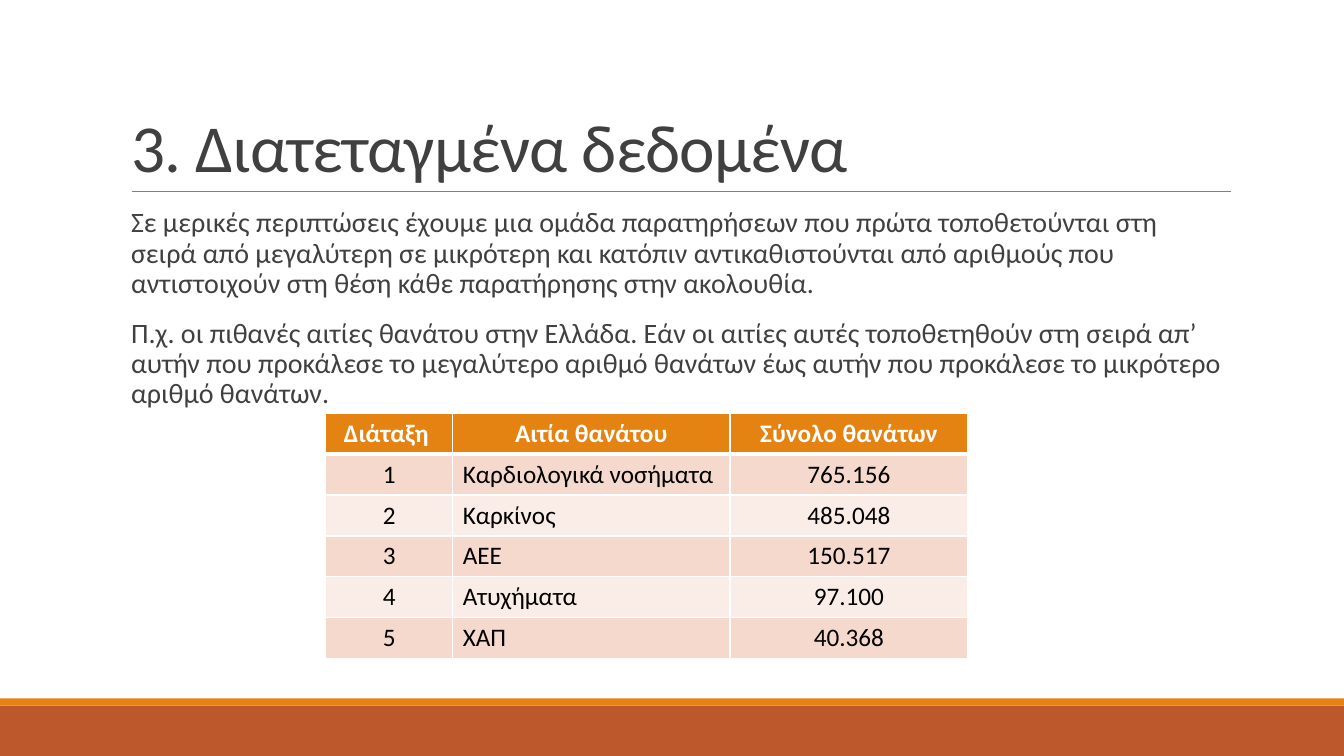
from lxml.etree import SubElement
from pptx import Presentation
from pptx.dml.color import RGBColor
from pptx.enum.shapes import MSO_CONNECTOR, MSO_SHAPE
from pptx.enum.text import MSO_ANCHOR, MSO_AUTO_SIZE, PP_ALIGN
from pptx.oxml.ns import qn
from pptx.util import Inches, Pt

FONT = "Calibri"
ORANGE = "E48312"
RUST = "BD582C"
DARK_GRAY = "404040"
WHITE = "FFFFFF"
BAND_FILLS = ("FAEDE7", "F5D9CC")

TITLE = "3. Διατεταγμένα δεδομένα"
PARAGRAPHS = (
    "Σε μερικές περιπτώσεις έχουμε μια ομάδα παρατηρήσεων που πρώτα τοποθετούνται στη "
    "σειρά από μεγαλύτερη σε μικρότερη και κατόπιν αντικαθιστούνται από αριθμούς που "
    "αντιστοιχούν στη θέση κάθε παρατήρησης στην ακολουθία.",
    "Π.χ. οι πιθανές αιτίες θανάτου στην Ελλάδα. Εάν οι αιτίες αυτές τοποθετηθούν στη "
    "σειρά απ’ αυτήν που προκάλεσε το μεγαλύτερο αριθμό θανάτων έως αυτήν που προκάλεσε "
    "το μικρότερο αριθμό θανάτων.",
)
CAUSES_OF_DEATH = (
    ("Διάταξη ", "Αιτία θανάτου", "Σύνολο θανάτων"),
    ("1", "Καρδιολογικά νοσήματα", "765.156"),
    ("2", "Καρκίνος", "485.048"),
    ("3", "ΑΕΕ", "150.517"),
    ("4", "Ατυχήματα", "97.100"),
    ("5", "ΧΑΠ", "40.368"),
)
COLUMN_WIDTHS = (1.26, 2.75, 2.36)
ROW_HEIGHT = 0.405


def rgb(color):
    return RGBColor.from_string(color)


def place(shape, left, top, width, height):
    shape.left, shape.top = Inches(left), Inches(top)
    shape.width, shape.height = Inches(width), Inches(height)


def add_text(paragraph, text, size, color, bold=False):
    run = paragraph.add_run()
    run.text = text
    run.font.name = FONT
    run.font.size = Pt(size)
    run.font.bold = bold
    run.font.color.rgb = rgb(color)
    return run


def add_band(slide, top, height, color):
    band = slide.shapes.add_shape(
        MSO_SHAPE.RECTANGLE, 0, Inches(top), Inches(13.33), Inches(height)
    )
    band.shadow.inherit = False
    band.fill.solid()
    band.fill.fore_color.rgb = rgb(color)
    band.line.fill.background()


def add_title_rule(slide):
    rule = slide.shapes.add_connector(
        MSO_CONNECTOR.STRAIGHT, Inches(1.31), Inches(1.9), Inches(12.21), Inches(1.9)
    )
    rule.line.color.rgb = rgb("808080")
    rule.line.width = Pt(0.5)
    SubElement(rule._element.spPr, qn("a:effectLst"))


def fill_title(title):
    place(title, 1.2, 0.31, 11, 1.59)
    frame = title.text_frame
    frame.auto_size = MSO_AUTO_SIZE.NONE
    frame.vertical_anchor = MSO_ANCHOR.BOTTOM
    paragraph = frame.paragraphs[0]
    paragraph.alignment = PP_ALIGN.LEFT
    paragraph.line_spacing = 0.85
    run = add_text(paragraph, TITLE, 48, DARK_GRAY)
    run.font._element.set("spc", "-50")


def set_blank_bullet(paragraph):
    properties = paragraph._p.get_or_add_pPr()
    properties.set("marL", str(Inches(0.1)))
    properties.set("indent", str(Inches(-0.1)))
    bullet_color = SubElement(properties, qn("a:buClr"))
    SubElement(bullet_color, qn("a:srgbClr"), val=ORANGE)
    SubElement(properties, qn("a:buChar"), char=" ")


def fill_body(body):
    place(body, 1.2, 2.02, 11, 4.4)
    frame = body.text_frame
    frame.auto_size = MSO_AUTO_SIZE.NONE
    frame.vertical_anchor = MSO_ANCHOR.TOP
    frame.margin_left = frame.margin_right = 0
    for index, text in enumerate(PARAGRAPHS):
        paragraph = frame.add_paragraph() if index else frame.paragraphs[0]
        paragraph.line_spacing = 0.9
        paragraph.space_before = Pt(12)
        paragraph.space_after = Pt(2)
        set_blank_bullet(paragraph)
        add_text(paragraph, text, 20, DARK_GRAY)


def set_borders(cell, top_width, bottom_width):
    properties = cell._tc.get_or_add_tcPr()
    widths = {"lnL": 1, "lnR": 1, "lnT": top_width, "lnB": bottom_width}
    for side, width in widths.items():
        border = SubElement(properties, qn(f"a:{side}"), w=str(Pt(width)))
        SubElement(SubElement(border, qn("a:solidFill")), qn("a:srgbClr"), val=WHITE)


def fill_cell(cell, text, row, column):
    is_header = row == 0
    set_borders(cell, 3 if row == 1 else 1, 3 if is_header else 1)
    cell.fill.solid()
    cell.fill.fore_color.rgb = rgb(ORANGE if is_header else BAND_FILLS[row % 2])
    paragraph = cell.text_frame.paragraphs[0]
    is_cause = column == 1 and not is_header
    paragraph.alignment = PP_ALIGN.LEFT if is_cause else PP_ALIGN.CENTER
    add_text(paragraph, text, 18, WHITE if is_header else "000000", is_header)


def add_causes_table(slide):
    row_count = len(CAUSES_OF_DEATH)
    table = slide.shapes.add_table(
        row_count, len(COLUMN_WIDTHS), Inches(3.23), Inches(4.1),
        Inches(sum(COLUMN_WIDTHS)), Inches(ROW_HEIGHT * row_count),
    ).table
    for column, width in zip(table.columns, COLUMN_WIDTHS):
        column.width = Inches(width)
    for row, texts in enumerate(CAUSES_OF_DEATH):
        for column, text in enumerate(texts):
            fill_cell(table.cell(row, column), text, row, column)


def main():
    presentation = Presentation()
    presentation.slide_width = Inches(13.33)
    presentation.slide_height = Inches(7.5)
    slide = presentation.slides.add_slide(presentation.slide_layouts[1])
    add_band(slide, 7, 0.5, RUST)
    add_band(slide, 6.93, 0.07, ORANGE)
    add_title_rule(slide)
    fill_title(slide.shapes.title)
    fill_body(slide.placeholders[1])
    add_causes_table(slide)
    presentation.save("out.pptx")


if __name__ == "__main__":
    main()
